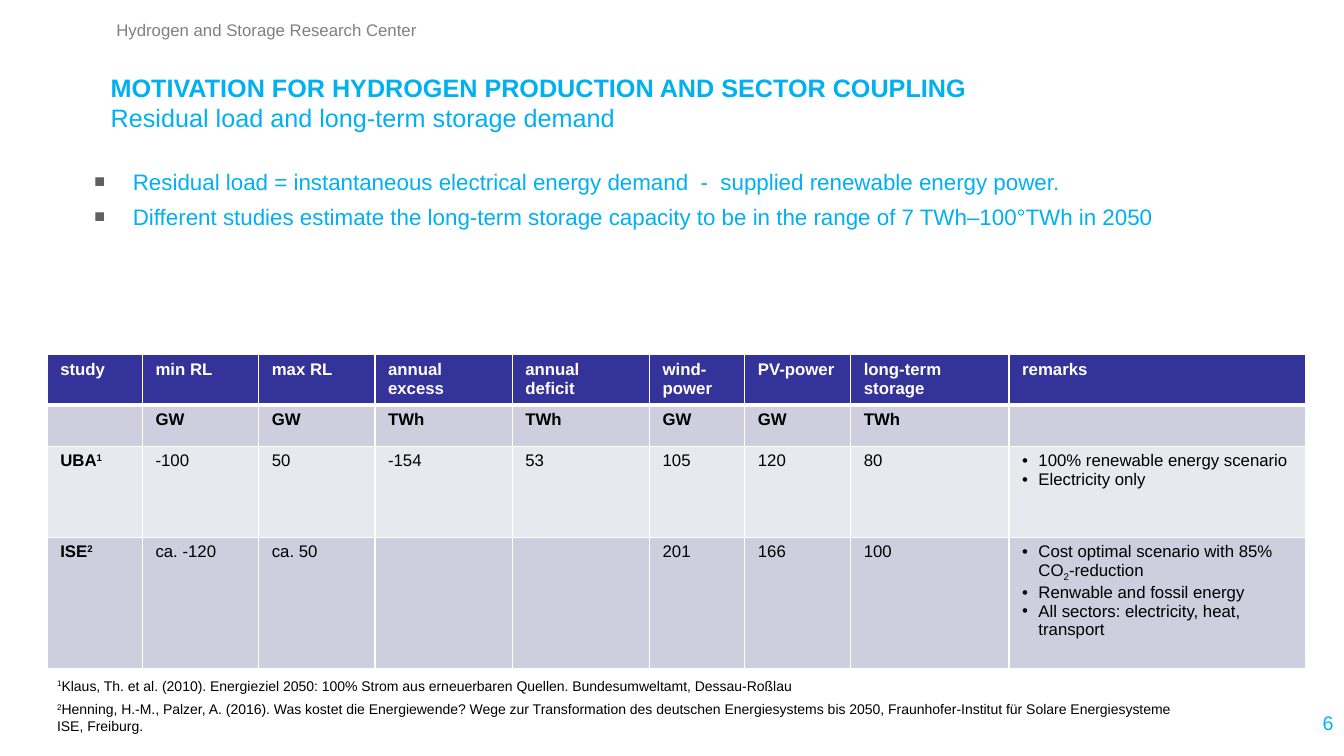
from lxml import etree
from pptx import Presentation
from pptx import util as u
from pptx.dml.color import RGBColor
from pptx.enum import text
from pptx.oxml.ns import qn

COLORS = {"accent": "00B0F0", "grey": "808080", "bullet": "606060",
          "black": "000000", "white": "FFFFFF", "head": "333399",
          "dark band": "CECEDE", "light band": "E8E8EF"}

SUPER, SUB = 30000, -25000

COLUMN_WIDTHS = [2.4, 2.93, 2.93, 3.46, 3.46, 2.4, 2.67, 3.99, 7.48]
ROW_HEIGHTS = [1.27, 1.03, 2.3, 3.3]
ROW_FILLS = ["head", "dark band", "light band", "dark band"]

# A cell is a list of paragraphs; a paragraph is a string or a list of pieces.
STUDIES = [
    [["study"], ["min RL"], ["max RL"], ["annual", "excess"],
     ["annual", "deficit"], ["wind-power"], ["PV-power"],
     ["long-term storage"], ["remarks"]],
    [[], ["GW"], ["GW"], ["TWh"], ["TWh"], ["GW"], ["GW"], ["TWh"], []],
    [[["UBA", ("1", SUPER)]], ["-100"], ["50"], ["-154"], ["53"], ["105"],
     ["120"], ["80"], ["100% renewable energy scenario", "Electricity only"]],
    [[["ISE", ("2", SUPER)]], ["ca. -120"], ["ca. 50"], [], [], ["201"],
     ["166"], ["100"],
     [["Cost optimal scenario with 85% CO", ("2", SUB), "-reduction"],
      "Renwable and fossil energy",
      "All sectors: electricity, heat, transport"]],
]

FOOTNOTES = [
    ((1.19, 16.94, 29.06, 0.69),
     [("1", SUPER), "Klaus, Th. et al. (2010). Energieziel 2050: 100% Strom aus "
      "erneuerbaren Quellen. Bundesumweltamt, Dessau-Roßlau"]),
    ((1.19, 17.53, 29.06, 1.4),
     [("2", SUPER), "Henning, H.-M., Palzer, A. (2016). Was kostet die "
      "Energiewende? Wege zur Transformation des deutschen Energiesystems bis "
      "2050, Fraunhofer-Institut für Solare Energiesysteme ISE, Freiburg."]),
]


def rgb(name):
    return RGBColor.from_string(COLORS[name])


def apply(target, values):
    for name, value in values.items():
        setattr(target, name, value)


def add_child(parent, tag, **attributes):
    return etree.SubElement(parent, qn(tag), attributes)


def add_bullet(para, mark, indent, color=None, percent=100):
    """Give a paragraph a hanging bullet; the indent is in centimetres."""
    props = para._p.get_or_add_pPr()
    props.set("marL", str(u.Cm(indent)))
    props.set("indent", str(-u.Cm(indent)))
    if color:
        add_child(add_child(props, "a:buClr"), "a:srgbClr", val=COLORS[color])
    add_child(props, "a:buSzPct", val=str(percent * 1000))
    add_child(props, "a:buFont", typeface="Arial")
    add_child(props, "a:buChar", char=mark)


def add_span(para, words, size, color, bold=False, baseline=0):
    span = para.add_run()
    span.text = words
    apply(span.font, {"name": "Arial", "size": u.Pt(size), "bold": bold})
    span.font.color.rgb = rgb(color)
    if baseline:
        span._r.get_or_add_rPr().set("baseline", str(baseline))


def fill_para(para, pieces, **look):
    """Write a string, or a list of strings and (words, baseline) pairs."""
    for piece in [pieces] if isinstance(pieces, str) else pieces:
        words, baseline = (piece, 0) if isinstance(piece, str) else piece
        add_span(para, words, baseline=baseline, **look)


def paragraphs(frame, count):
    return [frame.paragraphs[0]] + [frame.add_paragraph() for _ in range(count - 1)]


def add_frame(page, box):
    frame = page.shapes.add_textbox(*map(u.Cm, box)).text_frame
    apply(frame, {"word_wrap": True, "auto_size": text.MSO_AUTO_SIZE.NONE,
                  "vertical_anchor": text.MSO_ANCHOR.TOP})
    return frame


def add_line(page, box, pieces, size, color, **layout):
    """Place a one-paragraph text box."""
    para = add_frame(page, box).paragraphs[0]
    apply(para, layout)
    fill_para(para, pieces, size=size, color=color)


def add_title(page, box, heading, subheading):
    para = add_frame(page, box).paragraphs[0]
    add_span(para, heading, 18, "accent", bold=True)
    para.add_line_break()
    add_span(para, subheading, 18, "accent")


def add_points(page, box, points):
    frame = add_frame(page, box)
    for index, (para, point) in enumerate(zip(paragraphs(frame, len(points)), points)):
        add_bullet(para, "■", 0.97, "bullet", 80)
        if index:
            para.space_before = u.Pt(6)
        fill_para(para, point, size=16, color="accent")


def add_borders(cell, widths):
    """Draw white cell borders; widths maps a side to points."""
    props = cell._tc.get_or_add_tcPr()
    for side, width in widths.items():
        line = add_child(props, f"a:ln{side}", w=str(u.Pt(width)))
        add_child(add_child(line, "a:solidFill"), "a:srgbClr", val=COLORS["white"])


def fill_cell(cell, row, column, content):
    apply(cell, {"margin_left": u.Cm(0.33), "margin_right": u.Cm(0.33),
                 "margin_top": u.Cm(0.13), "margin_bottom": u.Cm(0.13)})
    add_borders(cell, {"L": 1, "R": 1, "T": 3 if row == 1 else 1,
                       "B": 3 if row == 0 else 1})
    cell.fill.solid()
    cell.fill.fore_color.rgb = rgb(ROW_FILLS[row])
    is_remark = row > 1 and column == len(COLUMN_WIDTHS) - 1
    look = {"size": 12, "color": "black" if row else "white",
            "bold": row < 2 or column == 0}
    for para, pieces in zip(paragraphs(cell.text_frame, len(content)), content):
        if is_remark:
            add_bullet(para, "•", 0.41)
        fill_para(para, pieces, **look)


def add_study_table(page, left, top):
    table = page.shapes.add_table(
        len(ROW_HEIGHTS), len(COLUMN_WIDTHS), u.Cm(left), u.Cm(top),
        u.Cm(sum(COLUMN_WIDTHS)), u.Cm(sum(ROW_HEIGHTS))).table
    for column, width in zip(table.columns, COLUMN_WIDTHS):
        column.width = u.Cm(width)
    for row, height in zip(table.rows, ROW_HEIGHTS):
        row.height = u.Cm(height)
    for row, contents in enumerate(STUDIES):
        for column, content in enumerate(contents):
            fill_cell(table.cell(row, column), row, column, content)


def main():
    deck = Presentation()
    apply(deck, {"slide_width": u.Cm(33.87), "slide_height": u.Cm(19.05)})
    page = deck.slides.add_slide(deck.slide_layouts[6])
    add_line(page, (1.32, 0.33, 10.8, 0.81), "Hydrogen and Storage Research Center",
             12, "grey", alignment=text.PP_ALIGN.CENTER, line_spacing=1.1)
    add_line(page, (26.8, 17.78, 7.06, 1.27), "6", 14, "accent",
             alignment=text.PP_ALIGN.RIGHT)
    add_title(page, (2.54, 1.7, 24.26, 3.18),
              "MOTIVATION FOR HYDROGEN PRODUCTION AND SECTOR COUPLING ",
              "Residual load and long-term storage demand")
    add_points(page, (2.13, 4.11, 29.34, 7.21), [
        "Residual load = instantaneous electrical energy demand  -  "
        "supplied renewable energy power.",
        "Different studies estimate the long-term storage capacity to be "
        "in the range of 7 TWh–100°TWh in 2050"])
    add_study_table(page, 1.19, 8.94)
    for box, pieces in FOOTNOTES:
        add_line(page, box, pieces, 10, "black")
    deck.save("out.pptx")


if __name__ == "__main__":
    main()
